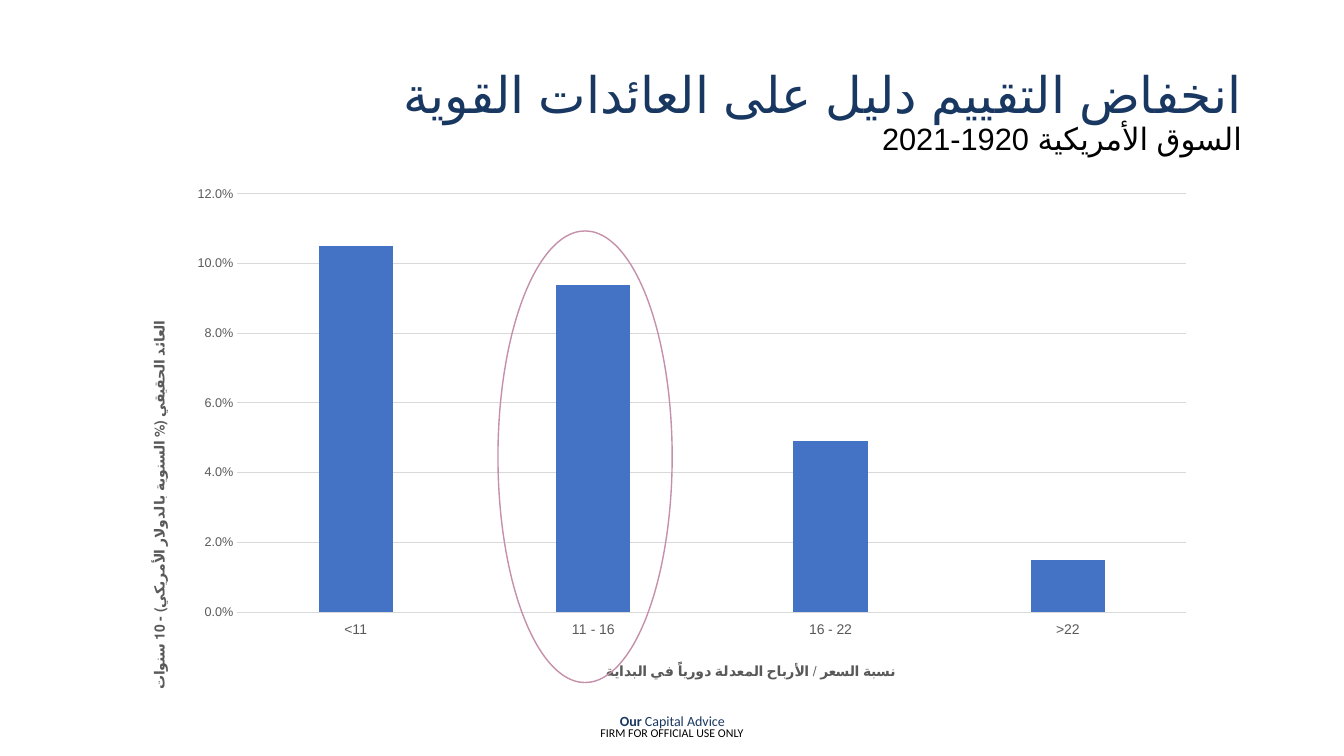
import pptx
import pptx.chart.data
import pptx.dml.color
import pptx.enum.chart
import pptx.enum.lang
import pptx.enum.shapes
import pptx.enum.text
import pptx.oxml
import pptx.oxml.ns
import pptx.util
from pptx.util import Cm

NAVY, BLACK, GREY, GRID = "193861", "000000", "595959", "D9D9D9"
BAR_BLUE, ROSE = "4472C4", "C490AA"
ALIGN = pptx.enum.text.PP_ALIGN
CHART_WIDTH, CHART_HEIGHT = 27, 13


def color(hex_value):
    return pptx.dml.color.RGBColor.from_string(hex_value)


def style_font(font, size, hex_value, name="Calibri", bold=False):
    font.size = pptx.util.Pt(size)
    font.name = name
    font.bold = bold
    font.color.rgb = color(hex_value)


def style_line(line, hex_value, width):
    line.color.rgb = color(hex_value)
    line.width = pptx.util.Pt(width)


def add_run(paragraph, text, size, hex_value, bold=False):
    run = paragraph.add_run()
    run.text = text
    style_font(run.font, size, hex_value, bold=bold)
    return run


def add_arabic_run(paragraph, text, size, hex_value):
    run = add_run(paragraph, text, size, hex_value)
    run.font.language_id = pptx.enum.lang.MSO_LANGUAGE_ID.ARABIC
    run._r.get_or_add_rPr().append(pptx.oxml.parse_xml(
        f'<a:cs {pptx.oxml.ns.nsdecls("a")} typeface="Arial"/>'))


def set_right_to_left(paragraph):
    paragraph._p.get_or_add_pPr().set("rtl", "1")


def add_text_box(slide, left, top, width, height, alignment, padding=0):
    """Add a middle-anchored box and return its first paragraph."""
    box = slide.shapes.add_textbox(Cm(left), Cm(top), Cm(width), Cm(height))
    frame = box.text_frame
    frame.word_wrap = True
    frame.vertical_anchor = pptx.enum.text.MSO_ANCHOR.MIDDLE
    frame.margin_left = frame.margin_right = Cm(padding)
    frame.margin_top = frame.margin_bottom = Cm(padding / 2)
    paragraph = frame.paragraphs[0]
    paragraph.alignment = alignment
    return paragraph


def set_layout(parent, index, left, top, width=None, height=None):
    """Place a chart part, in centimetres from the chart's corner."""
    for old_layout in parent.findall(pptx.oxml.ns.qn("c:layout")):
        parent.remove(old_layout)
    target = '<c:layoutTarget val="inner"/>' if width else ""
    modes = '<c:xMode val="edge"/><c:yMode val="edge"/>'
    lengths = [("x", left, CHART_WIDTH), ("y", top, CHART_HEIGHT),
               ("w", width, CHART_WIDTH), ("h", height, CHART_HEIGHT)]
    values = "".join(f'<c:{key} val="{length / whole}"/>'
                     for key, length, whole in lengths if length is not None)
    parent.insert(index, pptx.oxml.parse_xml(
        f'<c:layout {pptx.oxml.ns.nsdecls("c")}><c:manualLayout>'
        f'{target}{modes}{values}</c:manualLayout></c:layout>'))


def style_axis(axis, title, label_size, title_left, title_top):
    axis.major_tick_mark = axis.minor_tick_mark = pptx.enum.chart.XL_TICK_MARK.NONE
    style_font(axis.tick_labels.font, label_size, GREY, "Arial")
    paragraph = axis.axis_title.text_frame.paragraphs[0]
    set_right_to_left(paragraph)
    add_run(paragraph, title, 10, GREY, bold=True)
    set_layout(axis.axis_title._element, 1, title_left, title_top)


def add_returns_chart(slide):
    data = pptx.chart.data.CategoryChartData(number_format="0.0%")
    data.categories = ["<11", "11 - 16", "16 - 22", ">22"]
    data.add_series("Series 1", [0.105, 0.094, 0.049, 0.015])
    chart = slide.shapes.add_chart(
        pptx.enum.chart.XL_CHART_TYPE.COLUMN_CLUSTERED,
        Cm(3.43), Cm(4.42), Cm(CHART_WIDTH), Cm(CHART_HEIGHT), data).chart
    chart.has_legend = False
    chart.has_title = False
    style_font(chart.font, 10, BLACK, "Arial")

    # Bars
    plot = chart.plots[0]
    plot.vary_by_categories = False
    plot.gap_width = 219
    plot.overlap = -27
    fill = plot.series[0].format.fill
    fill.solid()
    fill.fore_color.rgb = color(BAR_BLUE)
    set_layout(chart._chartSpace.chart.plotArea, 0, 2.55, 0.47, 23.92, 10.58)

    # Axes
    category_axis = chart.category_axis
    style_axis(category_axis, "نسبة السعر / الأرباح المعدلة دورياً في البداية", 10, 11.78, 12.32)
    category_axis.tick_label_position = pptx.enum.chart.XL_TICK_LABEL_POSITION.LOW
    style_line(category_axis.format.line, GRID, 0.75)

    value_axis = chart.value_axis
    style_axis(value_axis, "العائد الحقيقي (% السنوية بالدولار الأمريكي) - 10 سنوات", 9, 0.35, 3.64)
    value_axis.minimum_scale = 0
    value_axis.maximum_scale = 0.12
    value_axis.major_unit = 0.02
    value_axis.tick_labels.number_format = "0.0%"
    value_axis.tick_labels.number_format_is_linked = False
    value_axis.format.line.fill.background()
    style_line(value_axis.major_gridlines.format.line, GRID, 0.75)


def add_highlight(slide):
    ellipse = slide.shapes.add_shape(
        pptx.enum.shapes.MSO_SHAPE.OVAL, Cm(12.55), Cm(5.82), Cm(4.39), Cm(11.38))
    ellipse.shadow.inherit = False
    ellipse.fill.background()
    style_line(ellipse.line, ROSE, 1)


def main():
    presentation = pptx.Presentation()
    presentation.slide_width = Cm(33.87)
    presentation.slide_height = Cm(19.05)
    slide = presentation.slides.add_slide(presentation.slide_layouts[6])

    # Classification footer
    footer = add_text_box(slide, 0, 18.16, 33.87, 0.61, ALIGN.CENTER)
    add_run(footer, "FIRM FOR OFFICIAL USE ONLY", 8.5, BLACK)

    # Title and subtitle
    title = add_text_box(slide, 2.34, 1.02, 29.21, 3.68, ALIGN.RIGHT, padding=0.25)
    title.line_spacing = 0.9
    set_right_to_left(title)
    add_arabic_run(title, "انخفاض التقييم دليل على العائدات القوية", 36, NAVY)
    title.add_line_break()
    add_arabic_run(title, "السوق الأمريكية 1920-2021", 22, BLACK)

    # Company name
    company = add_text_box(slide, 11.23, 17.65, 11.43, 1.02, ALIGN.CENTER, padding=0.25)
    add_run(company, "Our", 10, NAVY, bold=True)
    add_run(company, " Capital Advice", 10, NAVY)

    # Chart with the second bar circled
    add_returns_chart(slide)
    add_highlight(slide)

    presentation.save("out.pptx")


if __name__ == "__main__":
    main()
